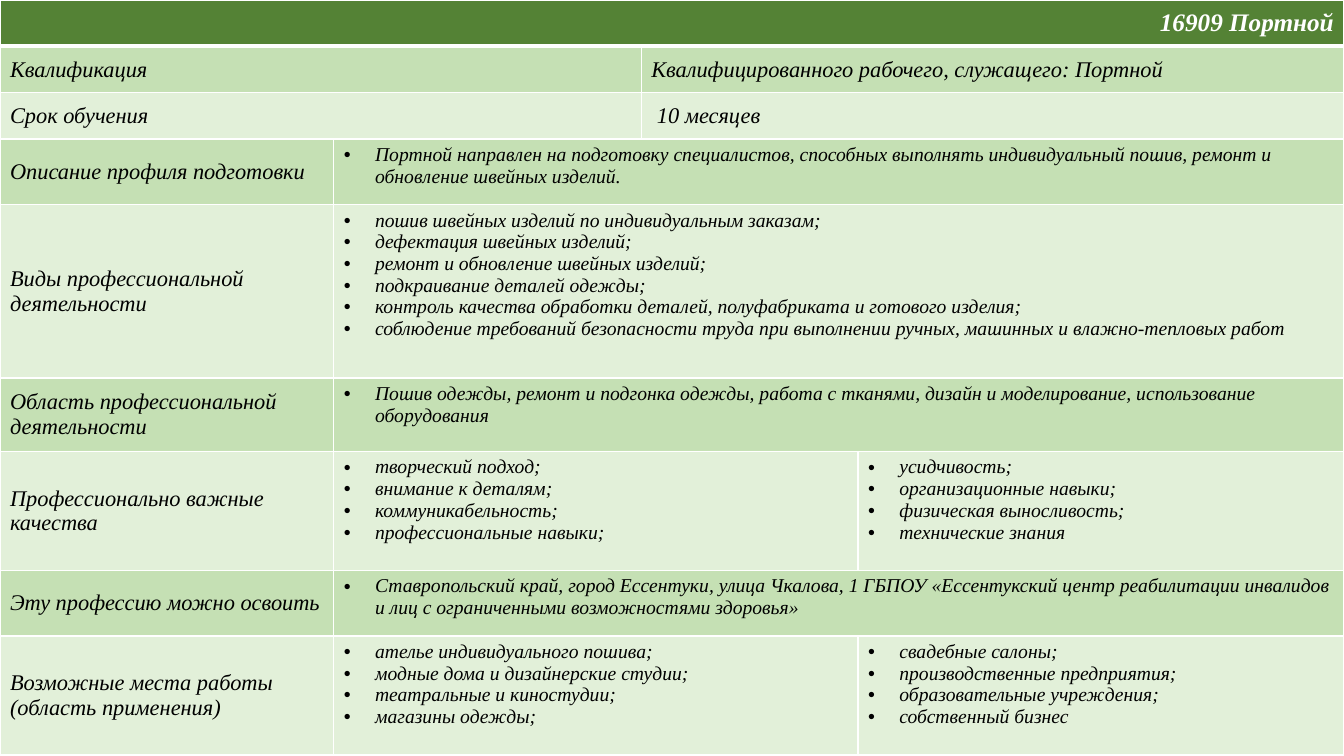
"""Build a one-slide profile of the tailoring profession as a full-slide table."""
from dataclasses import dataclass

from lxml import etree
from pptx import Presentation
from pptx.dml.color import RGBColor
from pptx.enum.text import MSO_ANCHOR, PP_ALIGN
from pptx.oxml.ns import qn
from pptx.util import Inches, Pt

LEFT, RIGHT = PP_ALIGN.LEFT, PP_ALIGN.RIGHT
TOP, MIDDLE = MSO_ANCHOR.TOP, MSO_ANCHOR.MIDDLE
FONT = "Times New Roman"
WHITE, BLACK = "FFFFFF", "000000"
HEADER_GREEN, BAND_GREEN, PALE_GREEN = "548235", "C5E0B4", "E2F0D9"
SLIDE_WIDTH, SLIDE_HEIGHT = 13.33, 7.5
COLUMN_WIDTHS = (3.31, 3.05, 2.15, 4.82)
BULLET_INDENT = 0.31


@dataclass(frozen=True)
class Style:
    size: int
    color: str = BLACK
    bold: bool = False
    align: PP_ALIGN = LEFT
    anchor: MSO_ANCHOR = MIDDLE
    bulleted: bool = False


HEADING = Style(18, WHITE, bold=True, align=RIGHT)
LABEL = Style(16)
POINTS = Style(14, anchor=TOP, bulleted=True)


@dataclass(frozen=True)
class Entry:
    span: int
    style: Style
    lines: tuple[str, ...]


@dataclass(frozen=True)
class ProfileRow:
    height: float
    entries: tuple[Entry, ...]


def fact_row(label: str, value: str) -> ProfileRow:
    """Describe a row of two plain values."""
    return ProfileRow(0.46, (Entry(2, LABEL, (label,)), Entry(2, LABEL, (value,))))


def list_row(height: float, label: str, *lists: tuple[str, ...]) -> ProfileRow:
    """Describe a label followed by one wide list or two lists side by side."""
    spans = (3,) if len(lists) == 1 else (2, 1)
    points = tuple(Entry(span, POINTS, lines) for span, lines in zip(spans, lists))
    return ProfileRow(height, (Entry(1, LABEL, (label,)), *points))


PROFILE = (
    ProfileRow(0.46, (Entry(4, HEADING, ("16909 Портной",)),)),
    fact_row("Квалификация", "Квалифицированного рабочего, служащего: Портной"),
    fact_row("Срок обучения", " 10 месяцев"),
    list_row(0.65, "Описание профиля подготовки", (
        "Портной направлен на подготовку специалистов, способных выполнять "
        "индивидуальный пошив, ремонт и обновление швейных изделий.",
    )),
    list_row(1.72, "Виды профессиональной деятельности", (
        "пошив швейных изделий по индивидуальным заказам;",
        "дефектация швейных изделий;",
        "ремонт и обновление швейных изделий;",
        "подкраивание деталей одежды;",
        "контроль качества обработки деталей, полуфабриката и готового изделия;",
        "соблюдение требований безопасности труда при выполнении ручных, "
        "машинных и влажно-тепловых работ",
    )),
    list_row(0.73, "Область профессиональной деятельности", (
        "Пошив одежды, ремонт и подгонка одежды, работа с тканями, дизайн и "
        "моделирование, использование оборудования",
    )),
    list_row(
        1.18, "Профессионально важные качества",
        ("творческий подход;", "внимание к деталям;", "коммуникабельность;",
         "профессиональные навыки;"),
        ("усидчивость;", "организационные навыки;", "физическая выносливость;",
         "технические знания"),
    ),
    list_row(0.65, "Эту профессию можно освоить", (
        "Ставропольский край, город Ессентуки, улица Чкалова, 1 ГБПОУ "
        "«Ессентукский центр реабилитации инвалидов и лиц с ограниченными "
        "возможностями здоровья»",
    )),
    list_row(
        1.18, "Возможные места работы (область применения)",
        ("ателье индивидуального пошива;", "модные дома и дизайнерские студии;",
         "театральные и киностудии;", "магазины одежды;"),
        ("свадебные салоны;", "производственные предприятия;",
         "образовательные учреждения;", "собственный бизнес"),
    ),
)


def rgb(color: str) -> RGBColor:
    """Turn a hex string into a colour."""
    return RGBColor.from_string(color)


def paint_cell(cell, fill: str, top: float, bottom: float) -> None:
    """Give a cell white borders of the stated widths and a solid fill."""
    properties = cell._tc.get_or_add_tcPr()
    for side, width in (("lnL", 1), ("lnR", 1), ("lnT", top), ("lnB", bottom)):
        border = etree.SubElement(properties, qn(f"a:{side}"), w=str(Pt(width)))
        solid = etree.SubElement(border, qn("a:solidFill"))
        etree.SubElement(solid, qn("a:srgbClr"), val=WHITE)
    cell.fill.solid()
    cell.fill.fore_color.rgb = rgb(fill)


def add_bullet(paragraph) -> None:
    """Give a paragraph a hanging round bullet."""
    properties = paragraph._p.get_or_add_pPr()
    properties.set("marL", str(Inches(BULLET_INDENT)))
    properties.set("indent", str(-Inches(BULLET_INDENT)))
    etree.SubElement(properties, qn("a:buFont"), typeface="Arial")
    etree.SubElement(properties, qn("a:buChar"), char="•")


def write_entry(cell, entry: Entry) -> None:
    """Write the lines of an entry into a cell in its style."""
    style = entry.style
    cell.vertical_anchor = style.anchor
    font_values = {"name": FONT, "size": Pt(style.size), "bold": style.bold, "italic": True}
    frame = cell.text_frame
    for index, line in enumerate(entry.lines):
        paragraph = frame.add_paragraph() if index else frame.paragraphs[0]
        paragraph.alignment = style.align
        if style.bulleted:
            add_bullet(paragraph)
        run = paragraph.add_run()
        run.text = line
        for name, value in font_values.items():
            setattr(run.font, name, value)
        run.font.color.rgb = rgb(style.color)


def fill_row(table, index: int, row: ProfileRow) -> None:
    """Paint one table row, merge its cells and write its entries."""
    table.rows[index].height = Inches(row.height)
    band = BAND_GREEN if index % 2 else PALE_GREEN
    fill = band if index else HEADER_GREEN
    for column in range(len(COLUMN_WIDTHS)):
        paint_cell(table.cell(index, column), fill,
                   top=3 if index == 1 else 1, bottom=1 if index else 3)
    column = 0
    for entry in row.entries:
        cell = table.cell(index, column)
        column += entry.span
        if entry.span > 1:
            cell.merge(table.cell(index, column - 1))
        write_entry(cell, entry)


def main() -> None:
    """Build and save the slide."""
    presentation = Presentation()
    presentation.slide_width = Inches(SLIDE_WIDTH)
    presentation.slide_height = Inches(SLIDE_HEIGHT)
    slide = presentation.slides.add_slide(presentation.slide_layouts.get_by_name("Blank"))
    profile_table = slide.shapes.add_table(
        len(PROFILE), len(COLUMN_WIDTHS), Inches(0), Inches(0),
        Inches(SLIDE_WIDTH), Inches(SLIDE_HEIGHT)).table
    profile_table.horz_banding = False
    for column, width in zip(profile_table.columns, COLUMN_WIDTHS):
        column.width = Inches(width)
    for index, row in enumerate(PROFILE):
        fill_row(profile_table, index, row)
    presentation.save("out.pptx")


if __name__ == "__main__":
    main()
